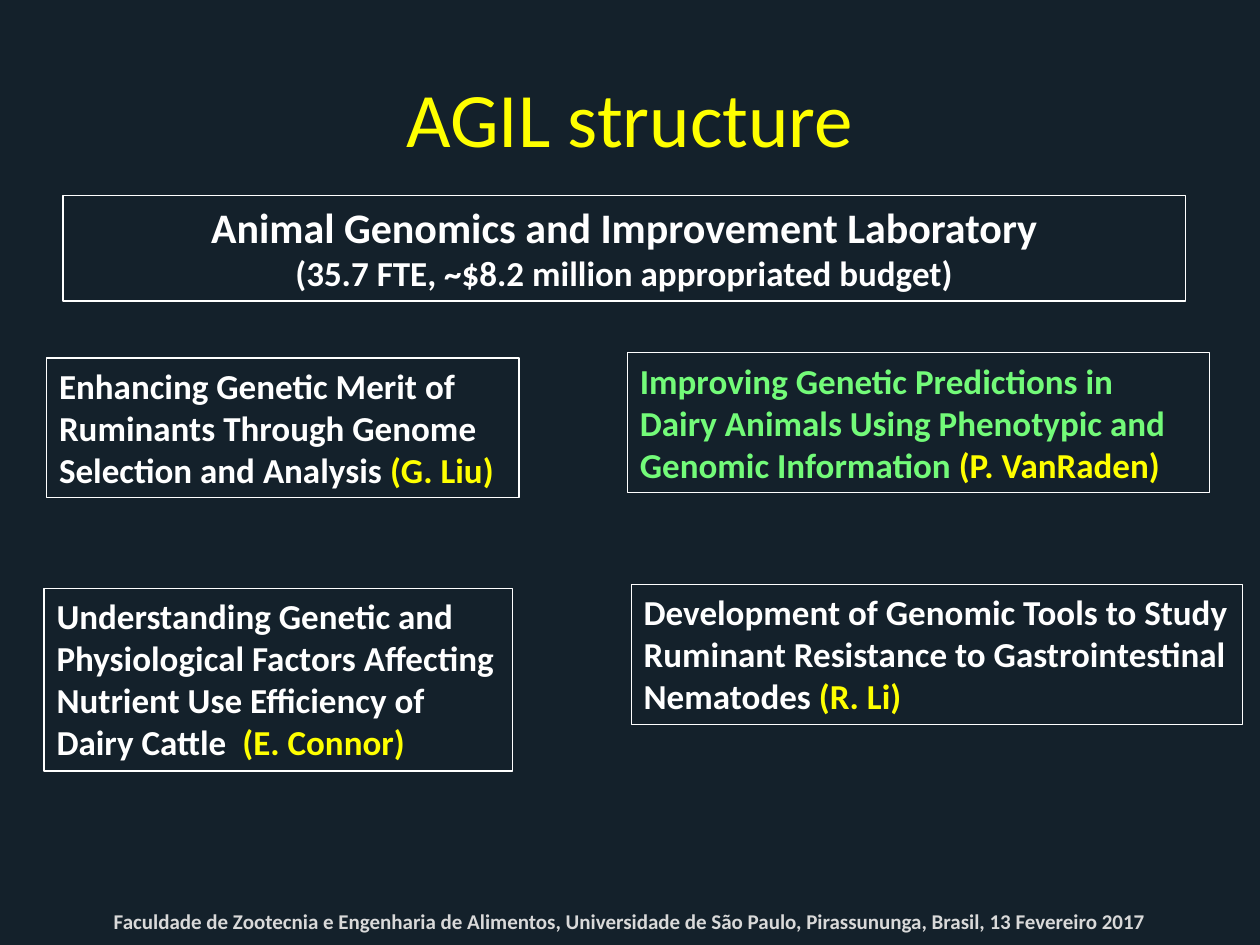
from pptx import Presentation
from pptx.dml.color import RGBColor
from pptx.enum.shapes import MSO_SHAPE
from pptx.enum.text import MSO_ANCHOR, MSO_AUTO_SIZE, PP_ALIGN
from pptx.util import Inches, Pt

COLORS = {
    "background": "14212B",
    "yellow": "FFFF00",
    "white": "FFFFFF",
    "green": "73FB79",
    "gray": "D9D9D9",
}
FONT = "Calibri"

TITLE = "AGIL structure"
FOOTER = ("Faculdade de Zootecnia e Engenharia de Alimentos, Universidade de São Paulo, "
          "Pirassununga, Brasil, 13 Fevereiro 2017")
LABORATORY = "Animal Genomics and Improvement Laboratory"
BUDGET = "(35.7 FTE, ~$8.2 million appropriated budget)"
PROJECTS = [
    ("Enhancing Genetic Merit of Ruminants Through Genome Selection and Analysis ",
     "(G. Liu)", "white", (0.37, 2.84, 3.75, 1.11)),
    ("Improving Genetic Predictions in Dairy Animals Using Phenotypic and Genomic Information ",
     "(P. VanRaden)", "green", (4.98, 2.8, 4.62, 1.11)),
    ("Understanding Genetic and Physiological Factors Affecting Nutrient Use Efficiency of Dairy Cattle  ",
     "(E. Connor)", "white", (0.35, 4.67, 3.72, 1.45)),
    ("Development of Genomic Tools to Study Ruminant Resistance to Gastrointestinal Nematodes ",
     "(R. Li)", "white", (5.01, 4.64, 4.85, 1.11)),
]


def color(name):
    return RGBColor.from_string(COLORS[name])


def format_paragraph(paragraph, size, color_name, bold, alignment):
    paragraph.alignment = alignment
    paragraph.font.name = FONT
    paragraph.font.size = Pt(size)
    paragraph.font.bold = bold
    paragraph.font.color.rgb = color(color_name)


def add_run(paragraph, text):
    run = paragraph.add_run()
    run.text = text
    return run


def add_box(slide, position, color_name, alignment):
    shape = slide.shapes.add_shape(MSO_SHAPE.RECTANGLE, *map(Inches, position))
    shape.shadow.inherit = False
    shape.fill.background()
    shape.line.color.rgb = color("white")
    shape.line.width = Pt(0.75)
    frame = shape.text_frame
    frame.word_wrap = True
    frame.auto_size = MSO_AUTO_SIZE.SHAPE_TO_FIT_TEXT
    frame.vertical_anchor = MSO_ANCHOR.TOP
    paragraph = frame.paragraphs[0]
    format_paragraph(paragraph, 20, color_name, True, alignment)
    return paragraph


def add_title(slide):
    title = slide.shapes.title
    title.left, title.top, title.width, title.height = map(Inches, (0.5, 0.3, 9, 1.25))
    title.text_frame.text = TITLE
    title.text_frame.vertical_anchor = MSO_ANCHOR.MIDDLE
    format_paragraph(title.text_frame.paragraphs[0], 44, "yellow", False, PP_ALIGN.CENTER)


def add_footer(slide):
    frame = slide.shapes.add_textbox(*map(Inches, (0.5, 7.06, 9, 0.4))).text_frame
    frame.word_wrap = True
    frame.vertical_anchor = MSO_ANCHOR.BOTTOM
    frame.text = FOOTER
    format_paragraph(frame.paragraphs[0], 12, "gray", True, PP_ALIGN.CENTER)


def add_laboratory(slide):
    paragraph = add_box(slide, (0.5, 1.55, 8.91, 0.84), "white", PP_ALIGN.CENTER)
    add_run(paragraph, LABORATORY).font.size = Pt(24)
    paragraph.add_line_break()
    add_run(paragraph, BUDGET)


def add_project(slide, name, leader, color_name, position):
    paragraph = add_box(slide, position, color_name, PP_ALIGN.LEFT)
    add_run(paragraph, name)
    add_run(paragraph, leader).font.color.rgb = color("yellow")


def main():
    presentation = Presentation()
    presentation.slide_width = Inches(10)
    presentation.slide_height = Inches(7.5)
    slide = presentation.slides.add_slide(presentation.slide_layouts[5])
    slide.background.fill.solid()
    slide.background.fill.fore_color.rgb = color("background")
    add_title(slide)
    add_footer(slide)
    add_laboratory(slide)
    for project in PROJECTS:
        add_project(slide, *project)
    presentation.save("out.pptx")


if __name__ == "__main__":
    main()
